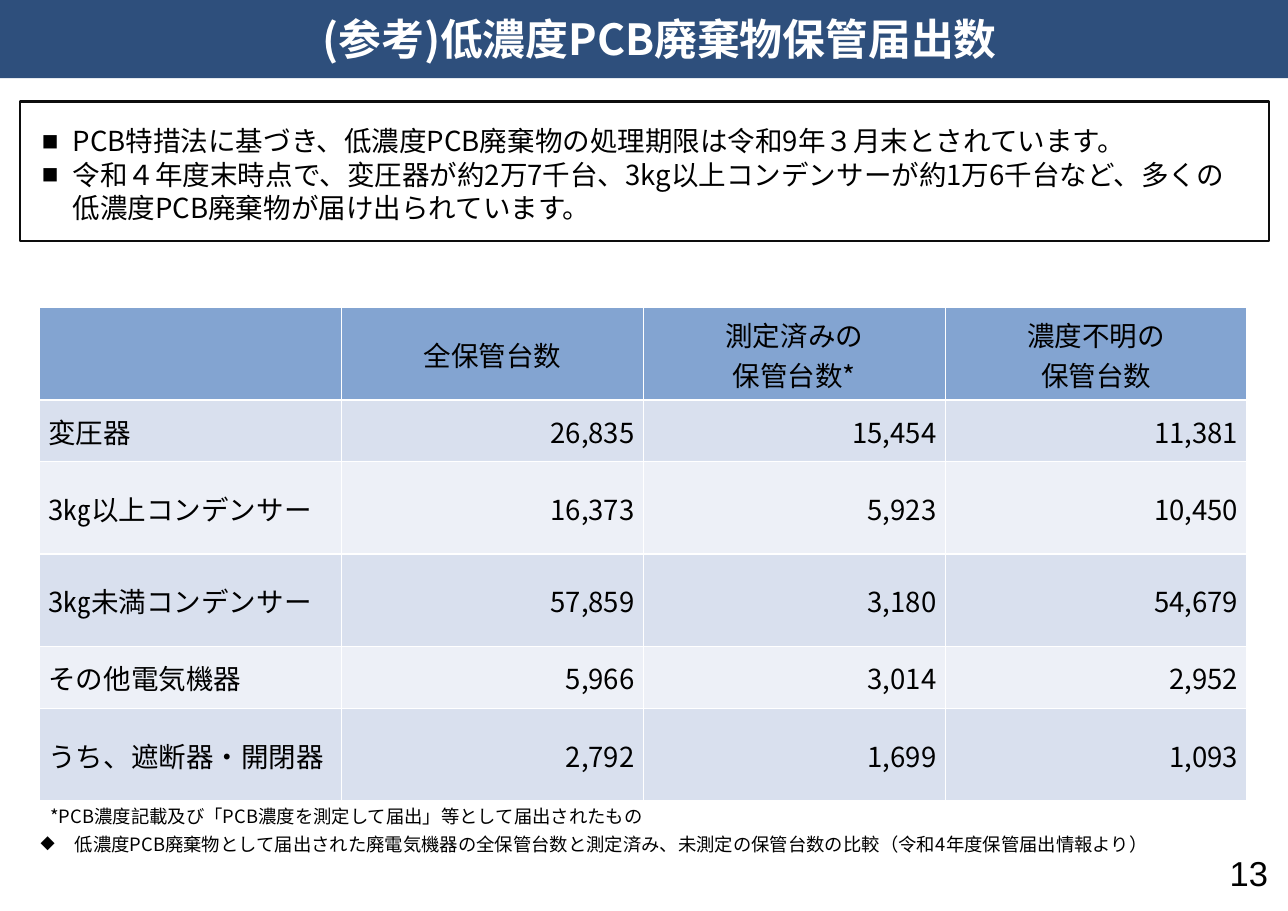
"""Build the slide on reported storage of low-concentration PCB waste."""
from lxml import etree
from pptx import Presentation
from pptx.dml.color import RGBColor
from pptx.enum.text import MSO_ANCHOR, MSO_AUTO_SIZE, PP_ALIGN
from pptx.oxml.ns import qn
from pptx.util import Pt

PX = 9144
JAPANESE, LATIN = "Noto Sans CJK JP", "Arial"
NAVY = RGBColor(0x2E, 0x4F, 0x7C)
HEADER_BLUE = RGBColor(0x83, 0xA4, 0xD1)
BAND_DARK = RGBColor(0xD9, 0xE0, 0xEE)
BAND_LIGHT = RGBColor(0xED, 0xF0, 0xF7)
BLACK = RGBColor(0, 0, 0)
FRAME_BLACK = RGBColor(0x0D, 0x0D, 0x0D)
WHITE = RGBColor(255, 255, 255)
LEFT, CENTER, RIGHT = PP_ALIGN.LEFT, PP_ALIGN.CENTER, PP_ALIGN.RIGHT
TOP, MIDDLE, BOTTOM = MSO_ANCHOR.TOP, MSO_ANCHOR.MIDDLE, MSO_ANCHOR.BOTTOM
NO_FIT = MSO_AUTO_SIZE.NONE

TITLE = "(参考)低濃度PCB廃棄物保管届出数"
POINTS = [
    "PCB特措法に基づき、低濃度PCB廃棄物の処理期限は令和9年３月末とされています。",
    "令和４年度末時点で、変圧器が約2万7千台、3kg以上コンデンサーが約1万6千台など、"
    "多くの低濃度PCB廃棄物が届け出られています。",
]
HEADERS = ["", "全保管台数", "測定済みの\n保管台数*", "濃度不明の\n保管台数"]
STORED_UNITS = [
    ("変圧器", "26,835", "15,454", "11,381"),
    ("3㎏以上コンデンサー", "16,373", "5,923", "10,450"),
    ("3㎏未満コンデンサー", "57,859", "3,180", "54,679"),
    ("その他電気機器", "5,966", "3,014", "2,952"),
    ("うち、遮断器・開閉器", "2,792", "1,699", "1,093"),
]
ROW_HEIGHTS = [84, 56, 84, 84, 56, 84]
MEASURED_NOTE = "*PCB濃度記載及び「PCB濃度を測定して届出」等として届出されたもの"
SOURCE_NOTE = (
    "低濃度PCB廃棄物として届出された廃電気機器の全保管台数と測定済み、"
    "未測定の保管台数の比較（令和4年度保管届出情報より）"
)


def place(shape, left, top, width, height):
    """Move and size a shape in px."""
    shape.left, shape.top = left * PX, top * PX
    shape.width, shape.height = width * PX, height * PX


def set_margins(target, left, top, right, bottom):
    """Set the inner margins of a text frame or cell in px."""
    target.margin_left, target.margin_top = left * PX, top * PX
    target.margin_right, target.margin_bottom = right * PX, bottom * PX


def write(frame, text, size, color=BLACK, align=LEFT, name=JAPANESE, bold=False):
    """Fill a frame with one paragraph per line in a single font."""
    frame.text = text
    for para in frame.paragraphs:
        para.alignment = align
        font = para.font
        font.size, font.bold, font.name = Pt(size), bold, name
        font.color.rgb = color
        defaults = para._p.pPr.find(qn("a:defRPr"))
        etree.SubElement(defaults, qn("a:ea")).set("typeface", name)


def set_indent(para, indent, bullet=None):
    """Indent a paragraph in px, hanging it after a bullet if one is given."""
    properties = para._p.get_or_add_pPr()
    properties.set("marL", str(indent * PX))
    properties.set("indent", str(-indent * PX if bullet else 0))
    if bullet:
        mark = etree.Element(qn("a:buChar"), char=bullet)
        properties.find(qn("a:defRPr")).addprevious(mark)


def add_title(page):
    """Turn the title placeholder into the banner."""
    banner = page.shapes.title
    place(banner, 0, 0, 1169, 71)
    banner.fill.solid()
    banner.fill.fore_color.rgb = NAVY
    frame = banner.text_frame
    frame.auto_size, frame.vertical_anchor = NO_FIT, MIDDLE
    set_margins(frame, 28, 4, 0, 0)
    write(frame, TITLE, 28, WHITE, CENTER, bold=True)
    frame.paragraphs[0].line_spacing = 0.9


def add_points(page):
    """Turn the body placeholder into the framed list."""
    box = page.placeholders[1]
    place(box, 18, 92, 1134, 127)
    box.line.color.rgb = FRAME_BLACK
    box.line.width = Pt(1.5)
    frame = box.text_frame
    frame.auto_size, frame.vertical_anchor = NO_FIT, TOP
    set_margins(frame, 20, 20, 20, 16)
    write(frame, "\n".join(POINTS), 18)
    for para in frame.paragraphs:
        para.space_before = Pt(0)
        para.line_spacing = Pt(22)
        set_indent(para, 28, "■")


def add_units_table(page):
    """Add the table of stored units."""
    rows = [HEADERS, *STORED_UNITS]
    table = page.shapes.add_table(
        len(rows), len(HEADERS), 36 * PX, 279 * PX, 1096 * PX, sum(ROW_HEIGHTS) * PX
    ).table
    for row, height in zip(table.rows, ROW_HEIGHTS):
        row.height = height * PX
    for row_index, row in enumerate(rows):
        band = BAND_DARK if row_index % 2 else BAND_LIGHT
        for column_index, text in enumerate(row):
            cell = table.cell(row_index, column_index)
            cell.fill.solid()
            cell.fill.fore_color.rgb = band if row_index else HEADER_BLUE
            cell.vertical_anchor = MIDDLE
            if row_index == 0:
                align, left, right = CENTER, 1, 1
            elif column_index == 0:
                align, left, right = LEFT, 4, 1
            else:
                align, left, right = RIGHT, 1, 8
            set_margins(cell, left, 1, right, 0)
            write(cell.text_frame, text, 18, align=align)
            if row_index and column_index == 0:
                set_indent(cell.text_frame.paragraphs[0], 4)


def add_note(page, text, left, top, width, bullet=None):
    """Add a one-line note below the table."""
    frame = page.shapes.add_textbox(left * PX, top * PX, width * PX, 30 * PX).text_frame
    frame.word_wrap, frame.vertical_anchor = True, MIDDLE
    write(frame, text, 12)
    if bullet:
        set_indent(frame.paragraphs[0], 31, bullet)


def add_page_number(page):
    """Add the page number in the lower right corner."""
    frame = page.shapes.add_textbox(1114 * PX, 772 * PX, 39 * PX, 39 * PX).text_frame
    frame.word_wrap, frame.vertical_anchor = False, BOTTOM
    set_margins(frame, 0, 0, 0, 0)
    write(frame, "13", 22.6, align=CENTER, name=LATIN)


def main():
    """Build and save the deck."""
    deck = Presentation()
    deck.slide_width, deck.slide_height = 1169 * PX, 827 * PX
    page = deck.slides.add_slide(deck.slide_layouts[1])
    add_page_number(page)
    add_points(page)
    add_note(page, SOURCE_NOTE, 27, 751, 1116, "◆")
    add_note(page, MEASURED_NOTE, 36, 726, 674)
    add_units_table(page)
    add_title(page)
    deck.save("out.pptx")


if __name__ == "__main__":
    main()
